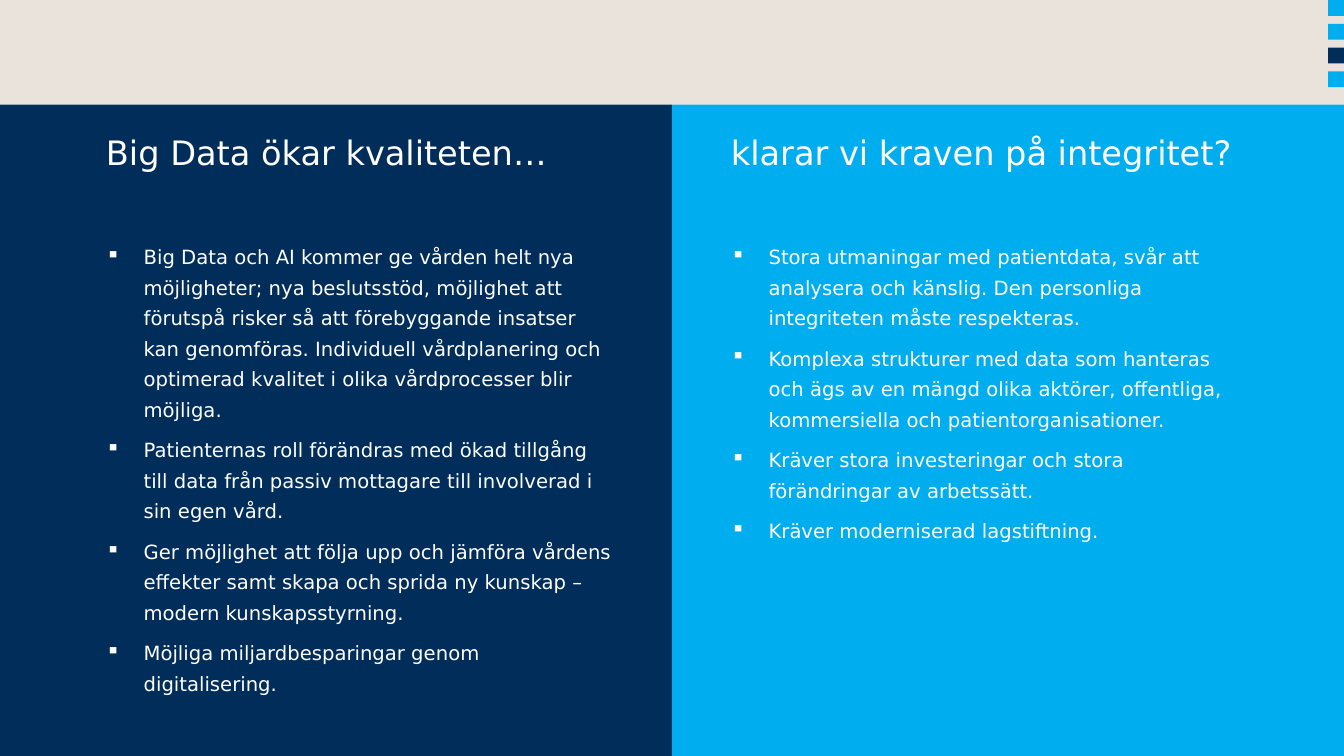
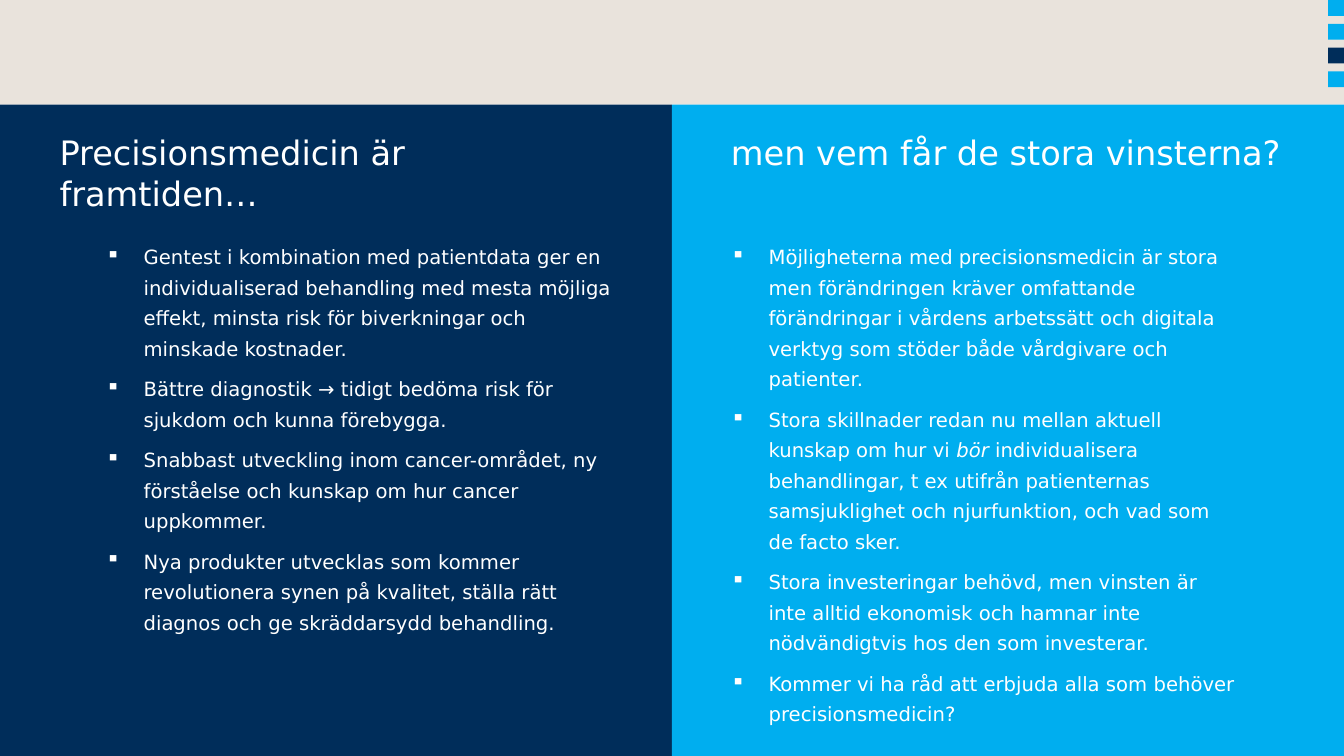
from pptx import Presentation
from pptx import util as u
from pptx.dml.color import RGBColor
from pptx.enum import shapes, text
from pptx.oxml import parse_xml
from pptx.oxml.ns import nsdecls

FONT = "DejaVu Sans"
NAVY, SKY, SAND, WHITE = "002D5A", "00AEEF", "E9E3DC", "FFFFFF"

# Lengths in centimetres
WIDTH, HEIGHT = 33.87, 19.05
BAND_HEIGHT = 2.64
SQUARE, SQUARE_STEP = 0.4, 0.6
SQUARE_COLOURS = [SKY, SKY, NAVY, SKY]
LEFT, RIGHT = 2.67, 18.42
HEADING_TOP, HEADING_HEIGHT, HEADING_WIDTH = 3.33, 1.5, 14.2
LIST_TOP, LIST_HEIGHT, LIST_WIDTH = 6, 10.95, 12.8
INDENT = 0.95

# Words between asterisks are set in italics
PAGES = [
    {
        "title": "Big Data ökar kvaliteten…",
        "title_place": (LEFT, LIST_WIDTH),
        "question": "klarar vi kraven på integritet?",
        "left": [
            "Big Data och AI kommer ge vården helt nya möjligheter; nya beslutsstöd, "
            "möjlighet att förutspå risker så att förebyggande insatser kan genomföras. "
            "Individuell vårdplanering och optimerad kvalitet i olika vårdprocesser "
            "blir möjliga.",
            "Patienternas roll förändras med ökad tillgång till data från passiv "
            "mottagare till involverad i sin egen vård.",
            "Ger möjlighet att följa upp och jämföra vårdens effekter samt skapa och "
            "sprida ny kunskap – modern kunskapsstyrning.",
            "Möjliga miljardbesparingar genom digitalisering.",
        ],
        "right": [
            "Stora utmaningar med patientdata, svår att analysera och känslig. "
            "Den personliga integriteten måste respekteras.",
            "Komplexa strukturer med data som hanteras och ägs av en mängd olika "
            "aktörer, offentliga, kommersiella och patientorganisationer.",
            "Kräver stora investeringar och stora förändringar av arbetssätt.",
            "Kräver moderniserad lagstiftning.",
        ],
    },
    {
        "title": "Precisionsmedicin är framtiden…",
        "title_place": (1.5, 13.9),
        "question": "men vem får de stora vinsterna?",
        "left": [
            "Gentest i kombination med patientdata ger en individualiserad behandling "
            "med mesta möjliga effekt, minsta risk för biverkningar och minskade "
            "kostnader.",
            "Bättre diagnostik → tidigt bedöma risk för sjukdom och kunna förebygga.",
            "Snabbast utveckling inom cancer-området, ny förståelse och kunskap om hur "
            "cancer uppkommer.",
            "Nya produkter utvecklas som kommer revolutionera synen på kvalitet, ställa "
            "rätt diagnos och ge skräddarsydd behandling.",
        ],
        "right": [
            "Möjligheterna med precisionsmedicin är stora men förändringen kräver "
            "omfattande förändringar i vårdens arbetssätt och digitala verktyg som "
            "stöder både vårdgivare och patienter.",
            "Stora skillnader redan nu mellan aktuell kunskap om hur vi *bör* "
            "individualisera behandlingar, t ex utifrån patienternas samsjuklighet och "
            "njurfunktion, och vad som de facto sker.",
            "Stora investeringar behövd, men vinsten är inte alltid ekonomisk och "
            "hamnar inte nödvändigtvis hos den som investerar.",
            "Kommer vi ha råd att erbjuda alla som behöver precisionsmedicin?",
        ],
    },
]


def colour(value):
    return RGBColor.from_string(value)


def add_block(page, kind, fill, left, top, width, height):
    block = page.shapes.add_shape(kind, *map(u.Cm, (left, top, width, height)))
    block.shadow.inherit = False
    block.fill.solid()
    block.fill.fore_color.rgb = colour(fill)
    block.line.fill.background()
    return block


def add_bullet(para):
    properties = para._p.get_or_add_pPr()
    properties.set("marL", str(u.Cm(INDENT)))
    properties.set("indent", str(-u.Cm(INDENT)))
    properties.append(parse_xml(f'<a:buChar {nsdecls("a")} char="▪"/>'))


def write(box, paragraphs, size, bullets=False, spacing=1.0, before=0, after=0):
    frame = box.text_frame
    frame.word_wrap = True
    frame.auto_size = text.MSO_AUTO_SIZE.NONE
    frame.vertical_anchor = text.MSO_ANCHOR.TOP
    frame.margin_left = frame.margin_right = frame.margin_top = frame.margin_bottom = 0
    for index, content in enumerate(paragraphs):
        para = frame.add_paragraph() if index else frame.paragraphs[0]
        if bullets:
            add_bullet(para)
        para.alignment = text.PP_ALIGN.LEFT
        para.line_spacing = spacing
        para.space_before = u.Pt(before if index else 0)
        para.space_after = u.Pt(after)
        for part, words in enumerate(content.split("*")):
            span = para.add_run()
            span.text = words
            span.font.name = FONT
            span.font.size = u.Pt(size)
            span.font.color.rgb = colour(WHITE)
            if part % 2:
                span.font.italic = True


def add_text(page, paragraphs, left, top, width, height, **style):
    box = page.shapes.add_textbox(*map(u.Cm, (left, top, width, height)))
    write(box, paragraphs, **style)


def decorate_layout(layout, page):
    """Draw the top band and squares on page, then move them to its layout."""
    rectangle = shapes.MSO_SHAPE.RECTANGLE
    blocks = [add_block(page, rectangle, SAND, 0, 0, WIDTH, BAND_HEIGHT)]
    for row, fill in enumerate(SQUARE_COLOURS):
        blocks.append(add_block(page, rectangle, fill, WIDTH - SQUARE,
                                row * SQUARE_STEP, SQUARE, SQUARE))
    for number, block in enumerate(blocks, start=100):
        block._element.nvSpPr.cNvPr.set("id", str(number))
        layout.shapes._spTree.append(block._element)


def fill_page(page, content):
    title = page.shapes.title
    for column, fill in enumerate((NAVY, SKY)):
        panel = add_block(page, shapes.MSO_SHAPE.PENTAGON, fill, column * WIDTH / 2,
                          BAND_HEIGHT, WIDTH / 2, HEIGHT - BAND_HEIGHT)
        panel.adjustments[0] = 0
        title._element.addprevious(panel._element)

    left, width = content["title_place"]
    title.left, title.top, title.width, title.height = map(
        u.Cm, (left, HEADING_TOP, width, HEADING_HEIGHT))
    write(title, [content["title"]], size=24)
    add_text(page, [content["question"]], RIGHT, HEADING_TOP, HEADING_WIDTH,
             HEADING_HEIGHT, size=24)
    for side, left in (("left", LEFT), ("right", RIGHT)):
        add_text(page, content[side], left, LIST_TOP, LIST_WIDTH, LIST_HEIGHT,
                 size=14, bullets=True, spacing=1.3, before=5, after=2)


def main():
    deck = Presentation()
    deck.slide_width, deck.slide_height = u.Cm(WIDTH), u.Cm(HEIGHT)
    layout = deck.slide_layouts.get_by_name("Title Only")
    pages = [deck.slides.add_slide(layout) for _ in PAGES]
    decorate_layout(layout, pages[0])
    for page, content in zip(pages, PAGES):
        fill_page(page, content)
    deck.save("out.pptx")


if __name__ == "__main__":
    main()
